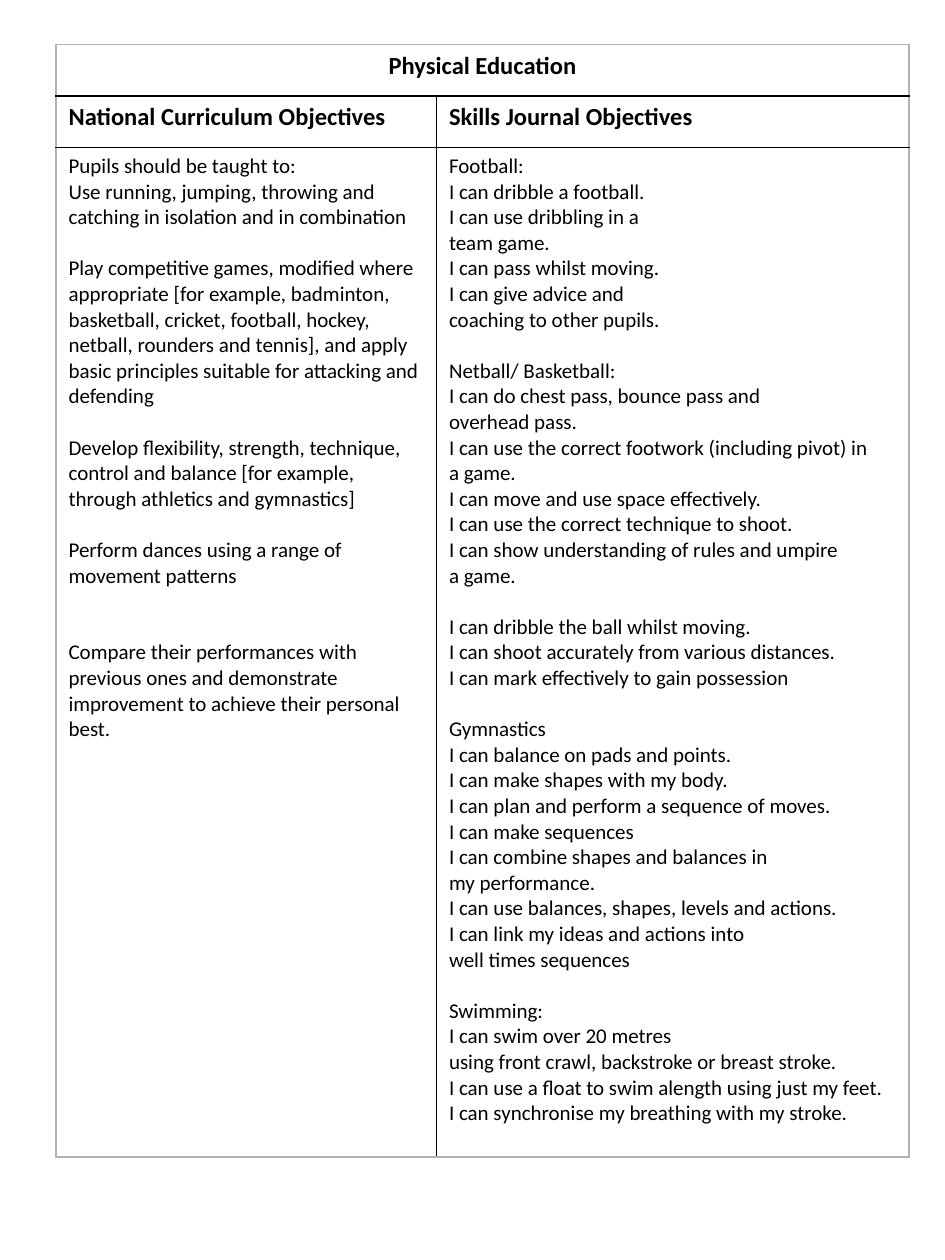
from pptx import Presentation
from pptx.dml.color import RGBColor
from pptx.enum.text import PP_ALIGN
from pptx.oxml.ns import qn
from pptx.util import Pt
from lxml.etree import SubElement

COLORS = {"text": "000000", "rule": "000000", "frame": "B2B2B2"}
FONT = "Calibri"
HEADING_SIZE, BODY_SIZE = 14, 12
BLANK_LINE = 14.64
NO_BREAK_SPACE = chr(160)

TITLE = "Physical Education"
HEADINGS = ["National Curriculum Objectives", "Skills Journal Objectives"]

# Each group is (blank lines above, paragraphs); "~" stands for a no-break space.
CURRICULUM = [
    (0, ["Pupils should be taught to:",
         "Use running, jumping, throwing and catching in isolation and in combination"]),
    (1, ["Play competitive games, modified where appropriate [for example, badminton, "
         "basketball, cricket, football, hockey, netball, rounders and tennis], and apply "
         "basic principles suitable for attacking and defending"]),
    (1, ["Develop flexibility, strength, technique, control and balance [for example, "
         "through athletics and gymnastics]"]),
    (1, ["Perform dances using a range of movement patterns"]),
    (2, ["Compare their performances with previous ones and demonstrate improvement to "
         "achieve their personal best."]),
]
SKILLS = [
    (0, ["Football:",
         "I can dribble a football.",
         "I can use dribbling in a",
         "team game.",
         "I can pass whilst moving.",
         "I can give advice and",
         "coaching to other pupils."]),
    (1, ["Netball/~Basketball:",
         "I can do chest pass, bounce pass and overhead~pass.~",
         "I can use the correct footwork (including pivot) in a~game.",
         "I can move and use space effectively.",
         "I can use the correct technique to shoot.",
         "I can show understanding of rules and umpire a~game."]),
    (1, ["I can dribble the ball whilst moving.",
         "I can shoot accurately from various distances.",
         "I can mark effectively to gain possession"]),
    (1, ["Gymnastics",
         "I can balance on pads and points.",
         "I can make shapes with my body.",
         "I can plan and perform a sequence of moves.",
         "I can make sequences",
         "I can combine shapes and balances in my~performance.",
         "I can use balances, shapes, levels and actions.",
         "I can link my ideas and actions into well~times~sequences"]),
    (1, ["Swimming:",
         "I can swim over 20 metres",
         "using front crawl, backstroke or~breast stroke.",
         "I can use a float to swim~alength~using just my feet.",
         "I can synchronise my breathing with my stroke."]),
]

LEFT, TOP = 32, 25.4
COLUMN_WIDTHS = [217.4, 270]
ROW_HEIGHTS = [29.4, 29.4, 577]


def write(cell, groups, size, bold=False, align=PP_ALIGN.LEFT):
    frame = cell.text_frame
    text = "\n".join(line for _, lines in groups for line in lines)
    frame.text = text.replace("~", NO_BREAK_SPACE)
    gaps = [blanks if i == 0 else 0 for blanks, lines in groups for i in range(len(lines))]
    for paragraph, blanks in zip(frame.paragraphs, gaps):
        paragraph.alignment = align
        paragraph.space_before = Pt(blanks * BLANK_LINE)
        font = paragraph.font
        font.name, font.size, font.bold = FONT, Pt(size), bold
        font.color.rgb = RGBColor.from_string(COLORS["text"])


def add_borders(cell, sides):
    """Put (side, colour, width) borders ahead of the cell's fill, as the schema asks."""
    properties = cell._tc.get_or_add_tcPr()
    for position, (side, color, width) in enumerate(sides):
        line = SubElement(properties, qn(f"a:ln{side}"), w=str(Pt(width)))
        fill = SubElement(line, qn("a:solidFill"))
        SubElement(fill, qn("a:srgbClr"), val=COLORS[color])
        properties.insert(position, line)


def border_sides(row, column):
    last_row, last_column = len(ROW_HEIGHTS) - 1, len(COLUMN_WIDTHS) - 1
    outer = {"L": column == 0, "R": column == last_column or row == 0,
             "T": row == 0, "B": row == last_row}
    return [(side, "frame" if is_outer else "rule", 1) for side, is_outer in outer.items()]


prs = Presentation()
prs.slide_width, prs.slide_height = Pt(540), Pt(720)
slide = prs.slides.add_slide(prs.slide_layouts[6])
objectives = slide.shapes.add_table(
    len(ROW_HEIGHTS), len(COLUMN_WIDTHS), Pt(LEFT), Pt(TOP),
    Pt(sum(COLUMN_WIDTHS)), Pt(sum(ROW_HEIGHTS))).table
for column, width in zip(objectives.columns, COLUMN_WIDTHS):
    column.width = Pt(width)
for row, height in zip(objectives.rows, ROW_HEIGHTS):
    row.height = Pt(height)

for r in range(len(ROW_HEIGHTS)):
    for c in range(len(COLUMN_WIDTHS)):
        cell = objectives.cell(r, c)
        cell.fill.background()
        add_borders(cell, border_sides(r, c))

objectives.cell(0, 0).merge(objectives.cell(0, 1))
write(objectives.cell(0, 0), [(0, [TITLE])], HEADING_SIZE, True, PP_ALIGN.CENTER)
for c, (heading, groups) in enumerate(zip(HEADINGS, [CURRICULUM, SKILLS])):
    write(objectives.cell(1, c), [(0, [heading])], HEADING_SIZE, True)
    write(objectives.cell(2, c), groups, BODY_SIZE)

prs.save("out.pptx")
